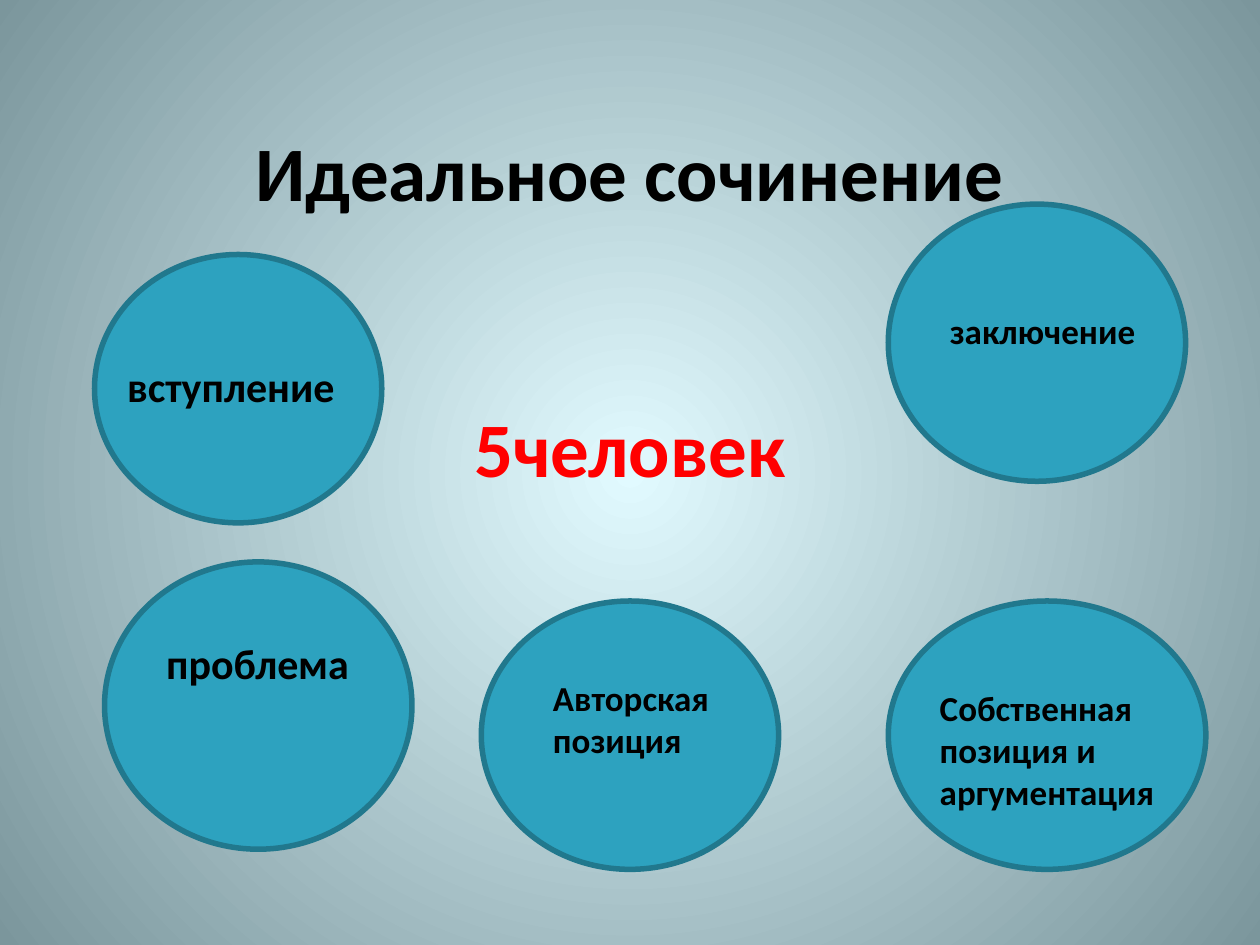
from lxml import etree
from pptx import Presentation
from pptx.dml.color import RGBColor
from pptx.enum.shapes import MSO_SHAPE
from pptx.enum.text import MSO_ANCHOR, MSO_AUTO_SIZE, PP_ALIGN
from pptx.oxml.ns import qn
from pptx.util import Inches, Pt

OVAL = MSO_SHAPE.OVAL
TOP = MSO_ANCHOR.TOP
CENTER = PP_ALIGN.CENTER
NO_AUTOFIT = MSO_AUTO_SIZE.NONE
FIT_SHAPE = MSO_AUTO_SIZE.SHAPE_TO_FIT_TEXT

TITLE_ONLY = 5
FONT = "Calibri"
BLACK, RED = "000000", "FF0000"
OVAL_FILL, OVAL_LINE = "2DA2BF", "21788D"
GLOW, EDGE = "E1FAFF", "7B969C"

OVALS = [
    (0.75, 2.02, 2.28, 2.13),
    (3.82, 4.77, 2.36, 2.13),
    (7.05, 1.62, 2.36, 2.2),
    (7.05, 4.77, 2.52, 2.13),
    (0.83, 4.46, 2.44, 2.28),
]
LABELS = [
    ("вступление", 24, (0.91, 2.81, 2.05, 0.5)),
    ("проблема", 24, (1.22, 5.01, 1.89, 0.5)),
    ("Авторская позиция", 20, (4.29, 5.32, 2.05, 0.77)),
    ("Собственная позиция и аргументация", 20, (7.36, 5.4, 2.05, 1.11)),
    ("заключение", 20, (7.44, 2.41, 1.97, 0.44)),
]


def color(value):
    """Turn a hex string into a colour."""
    return RGBColor.from_string(value)


def set_font(paragraph, size, value):
    """Give a paragraph the bold slide font."""
    font = paragraph.font
    font.name, font.size, font.bold = FONT, Pt(size), True
    font.color.rgb = color(value)


def set_background(slide):
    """Fill the slide with a gradient that spreads from its centre."""
    fill = slide.background.fill
    fill.gradient()
    for stop, position, value in zip(fill.gradient_stops, (0, 1), (GLOW, EDGE)):
        stop.position = position
        stop.color.rgb = color(value)
    gradient = slide.element.find(".//" + qn("a:gradFill"))
    linear = gradient.find(qn("a:lin"))
    circle = etree.Element(qn("a:path"), {"path": "circle"})
    sides = {side: "50000" for side in "ltrb"}
    etree.SubElement(circle, qn("a:fillToRect"), sides)
    gradient.replace(linear, circle)


def set_title(slide):
    """Write the heading and the red group size below it."""
    title = slide.shapes.title
    title.left, title.top = Inches(0.5), Inches(0.3)
    title.width, title.height = Inches(9), Inches(7.2)
    frame = title.text_frame
    frame.auto_size = NO_AUTOFIT
    frame.vertical_anchor = TOP
    frame.margin_top = Inches(0.69)
    frame.text = "Идеальное сочинение\n5человек"
    heading, group_size = frame.paragraphs
    for paragraph, value in ((heading, BLACK), (group_size, RED)):
        paragraph.alignment = CENTER
        paragraph.space_before = Pt(0)
        set_font(paragraph, 44, value)
    group_size.space_before = Pt(105)


def add_oval(slide, box):
    """Add one outlined oval."""
    shape = slide.shapes.add_shape(OVAL, *map(Inches, box))
    shape.shadow.inherit = False
    shape.fill.solid()
    shape.fill.fore_color.rgb = color(OVAL_FILL)
    shape.line.color.rgb = color(OVAL_LINE)
    shape.line.width = Pt(3.15)


def add_label(slide, text, size, box):
    """Add a wrapped label for an essay part."""
    frame = slide.shapes.add_textbox(*map(Inches, box)).text_frame
    frame.word_wrap = True
    frame.auto_size = FIT_SHAPE
    frame.text = text
    set_font(frame.paragraphs[0], size, BLACK)


def main():
    """Build and save the slide."""
    presentation = Presentation()
    presentation.slide_width, presentation.slide_height = Inches(10), Inches(7.5)
    slide = presentation.slides.add_slide(presentation.slide_layouts[TITLE_ONLY])
    set_background(slide)
    set_title(slide)
    for box in OVALS:
        add_oval(slide, box)
    for text, size, box in LABELS:
        add_label(slide, text, size, box)
    presentation.save("out.pptx")


if __name__ == "__main__":
    main()
